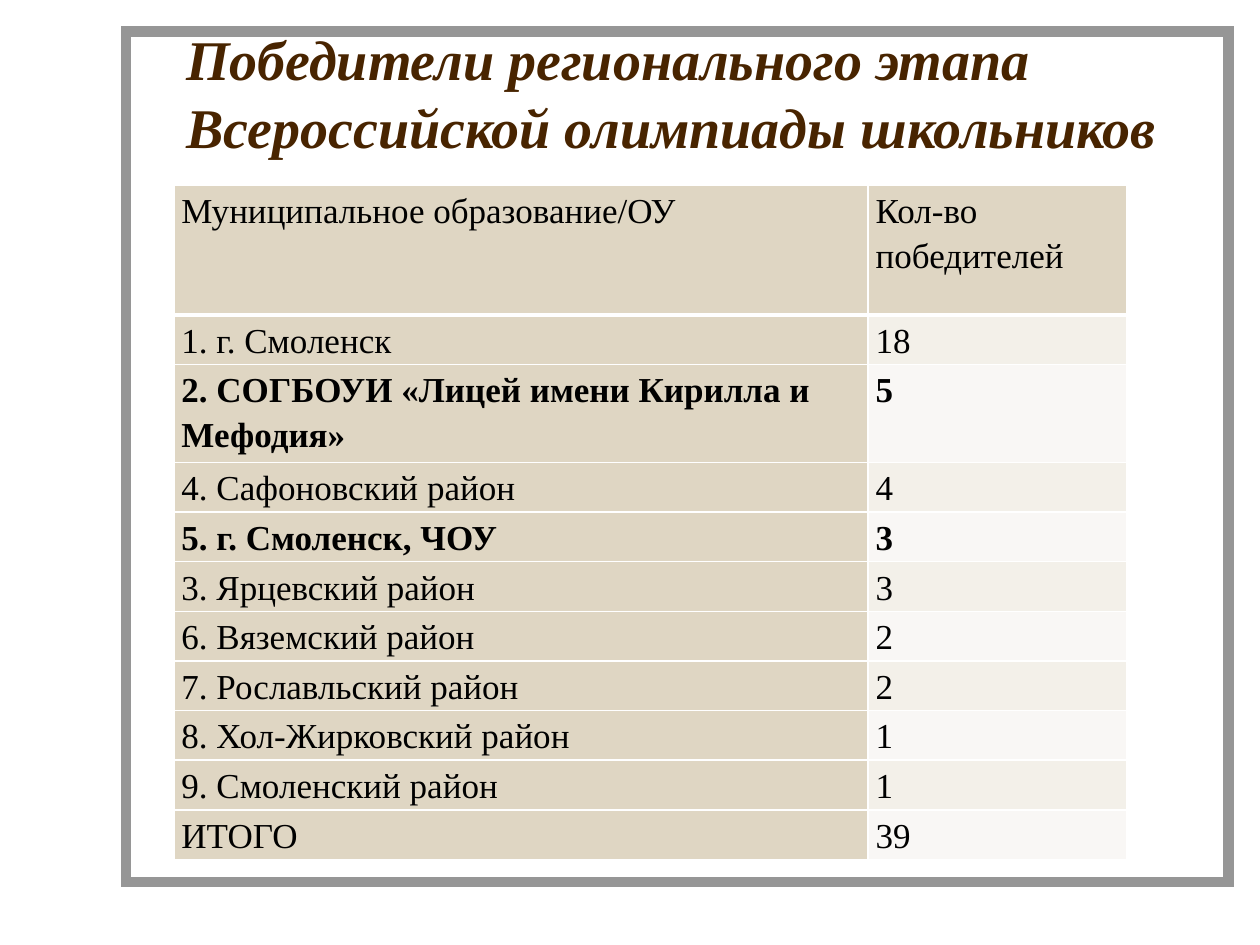
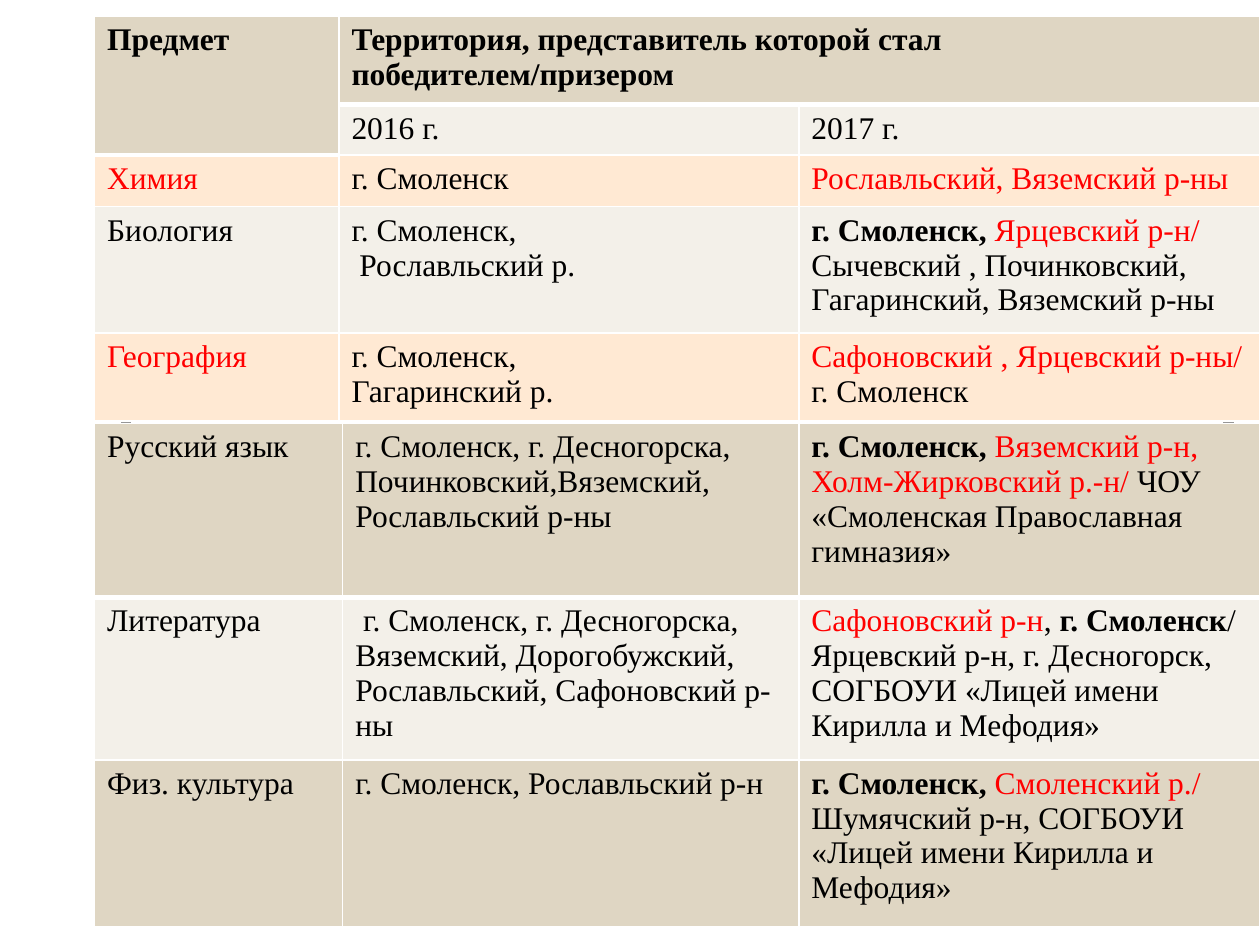
import dataclasses

import lxml.etree
import pptx
import pptx.dml.color
import pptx.enum.shapes
import pptx.enum.text
import pptx.oxml.ns
import pptx.util

Inches = pptx.util.Inches
Pt = pptx.util.Pt
qn = pptx.oxml.ns.qn


@dataclasses.dataclass(frozen=True)
class Theme:
    font: str = "Times New Roman"
    white: str = "FFFFFF"
    frame: str = "969696"
    title: str = "482400"
    text: str = "000000"
    red: str = "FF0000"
    tan: str = "DFD6C3"
    light: str = "F3F0E9"
    lighter: str = "F9F7F5"
    peach: str = "FFE9D3"
    title_size: int = 32
    winners_size: int = 20
    subjects_size: int = 18
    frame_width: float = 6
    thin: float = 1
    thick: float = 3


THEME = Theme()


@dataclasses.dataclass(frozen=True)
class Piece:
    """A stretch of text with its own colour and weight."""
    text: str
    color: str = THEME.text
    bold: bool = False


def red(text):
    return Piece(text, color=THEME.red)


def bold(text):
    return Piece(text, bold=True)


def rgb(color):
    return pptx.dml.color.RGBColor.from_string(color)


class Deck:
    def __init__(self, theme):
        self.theme = theme
        self.presentation = pptx.Presentation()
        self.presentation.slide_width = Inches(10)
        self.presentation.slide_height = Inches(7.5)
        self.slide = None

    def new_slide(self):
        """Start a blank slide with the shared grey frame."""
        self.slide = self.presentation.slides.add_slide(self.presentation.slide_layouts[6])
        frame = self.slide.shapes.add_shape(
            pptx.enum.shapes.MSO_SHAPE.RECTANGLE,
            Inches(1), Inches(0.25), Inches(8.75), Inches(6.75))
        frame.shadow.inherit = False
        frame.fill.solid()
        frame.fill.fore_color.rgb = rgb(self.theme.white)
        frame.line.color.rgb = rgb(self.theme.frame)
        frame.line.width = Pt(self.theme.frame_width)
        outline = frame._element.spPr.find(qn("a:ln"))
        lxml.etree.SubElement(outline, qn("a:miter"), lim="800000")

    def style(self, run, size, color, is_bold, is_italic=False):
        run.font.name = self.theme.font
        run.font.size = Pt(size)
        run.font.color.rgb = rgb(color)
        run.font.bold = is_bold
        run.font.italic = is_italic

    def title(self, text):
        heading = self.slide.shapes.add_textbox(
            Inches(1.38), Inches(0.44), Inches(8.74), Inches(0.58))
        frame = heading.text_frame
        frame.word_wrap = True
        frame.vertical_anchor = pptx.enum.text.MSO_ANCHOR.MIDDLE
        frame.text = text
        self.style(frame.paragraphs[0].runs[0], self.theme.title_size,
                   self.theme.title, True, True)

    def fill_cell(self, cell, content, size, spacing):
        """Fill a cell: a string, a Piece, or a list of paragraphs (lists of Pieces)."""
        if isinstance(content, str):
            content = [[Piece(line)] for line in content.split("\n")]
        elif isinstance(content, Piece):
            content = [[content]]
        frame = cell.text_frame
        for index, pieces in enumerate(content):
            paragraph = frame.add_paragraph() if index else frame.paragraphs[0]
            paragraph.line_spacing = spacing
            for piece in pieces:
                run = paragraph.add_run()
                run.text = piece.text
                self.style(run, size, piece.color, piece.bold)

    def borders(self, cell, top, bottom):
        properties = cell._tc.get_or_add_tcPr()
        widths = {"L": self.theme.thin, "R": self.theme.thin, "T": top, "B": bottom}
        for side, width in widths.items():
            line = lxml.etree.SubElement(properties, qn("a:ln" + side), w=str(Pt(width)))
            fill = lxml.etree.SubElement(line, qn("a:solidFill"))
            lxml.etree.SubElement(fill, qn("a:srgbClr"), val=self.theme.white)

    def table(self, left, top, columns, heights, rows, fills, size,
              heavy=(), merges=(), margins=None, spacing=None):
        """Draw a table; heavy lists the cells with a thick lower edge."""
        grid = self.slide.shapes.add_table(
            len(rows), len(columns), Inches(left), Inches(top),
            Inches(sum(columns)), Inches(sum(heights))).table
        grid.first_row = grid.horz_banding = False
        for column, width in zip(grid.columns, columns):
            column.width = Inches(width)
        for row, height in zip(grid.rows, heights):
            row.height = Inches(height)

        def edge(r, c):
            return self.theme.thick if (r, c) in heavy else self.theme.thin

        for r, contents in enumerate(rows):
            for c, content in enumerate(contents):
                cell = grid.cell(r, c)
                self.borders(cell, edge(r - 1, c), edge(r, c))
                cell.fill.solid()
                cell.fill.fore_color.rgb = rgb(fills[r][c])
                if margins:
                    (cell.margin_left, cell.margin_top,
                     cell.margin_right, cell.margin_bottom) = map(Inches, margins)
                if content is not None:
                    self.fill_cell(cell, content, size, spacing)
        for first, last in merges:
            grid.cell(*first).merge(grid.cell(*last))


def winners_slide(deck):
    theme = deck.theme
    deck.new_slide()
    deck.title("Победители регионального этапа Всероссийской олимпиады школьников")
    winners = [
        ("Муниципальное образование/ОУ", "Кол-во победителей"),
        ("1. г. Смоленск", "18"),
        (bold("2. СОГБОУИ «Лицей имени Кирилла и Мефодия»"), bold("5")),
        ("4. Сафоновский район", "4"),
        (bold("5. г. Смоленск, ЧОУ"), bold("3")),
        ("3. Ярцевский район", "3"),
        ("6. Вяземский район", "2"),
        ("7. Рославльский район", "2"),
        ("8. Хол-Жирковский район", "1"),
        ("9. Смоленский район", "1"),
        ("ИТОГО", "39"),
    ]
    bands = (theme.lighter, theme.light)
    fills = [(theme.tan, bands[r % 2] if r else theme.tan) for r in range(len(winners))]
    deck.table(1.38, 1.47, (5.51, 2.05), [1.03, 0.35, 0.69] + [0.35] * 8,
               winners, fills, theme.winners_size, heavy={(0, 0), (0, 1)},
               margins=(0.06, 0.01, 0.06, 0), spacing=1.15)


def subjects_slide(deck):
    theme = deck.theme
    deck.new_slide()
    tan, light, peach = ([color] * 3 for color in (theme.tan, theme.light, theme.peach))
    left, size = 0.75, theme.subjects_size
    smolensk = bold("г. Смоленск, ")

    # Sciences, with the two-level header
    sciences = [
        (bold("Предмет"),
         bold("Территория, представитель которой стал победителем/призером"), None),
        (None, "2016 г.", "2017 г."),
        (red("Химия"), "г. Смоленск", red("Рославльский, Вяземский р-ны")),
        ("Биология", "г. Смоленск,\n Рославльский р.",
         [[smolensk, red("Ярцевский р-н/ "),
           Piece("Сычевский , Починковский, Гагаринский, Вяземский р-ны")]]),
        (red("География"), "г. Смоленск,\nГагаринский р.",
         [[red("Сафоновский , Ярцевский р-ны/ "), Piece("г. Смоленск")]]),
    ]
    deck.table(left, 0.13, (1.94, 3.65, 3.66), (0.64, 0.4, 0.41, 0.93, 0.65),
               sciences, (tan, light, peach, light, peach), size,
               heavy={(0, 0), (0, 1), (0, 2), (1, 0)},
               merges=[((0, 0), (1, 0)), ((0, 1), (0, 2))])

    # Languages and physical education share columns and a thick first edge
    languages = [
        ("Русский язык",
         "г. Смоленск, г. Десногорска, Починковский,Вяземский, Рославльский р-ны",
         [[smolensk, red("Вяземский р-н, Холм-Жирковский р.-н/ "),
           Piece("ЧОУ «Смоленская Православная гимназия»")]]),
        ("Литература",
         " г. Смоленск, г. Десногорска, Вяземский, Дорогобужский, "
         "Рославльский, Сафоновский р-ны",
         [[red("Сафоновский р-н"), Piece(", "), bold("г. Смоленск"), Piece("/")],
          [Piece("Ярцевский р-н, г. Десногорск, СОГБОУИ «Лицей имени Кирилла и Мефодия»")]]),
    ]
    sport = [
        ("Физ. культура", "г. Смоленск, Рославльский р-н",
         [[smolensk, red("Смоленский р./ "),
           Piece("Шумячский р-н, СОГБОУИ «Лицей имени Кирилла и Мефодия»")]]),
    ]
    for top, heights, rows in ((3.36, (1.38, 1.3), languages), (6.03, (1.34,), sport)):
        deck.table(left, top, (1.97, 3.62, 3.66), heights, rows, (tan, light), size,
                   heavy={(0, 0), (0, 1), (0, 2)})


def main():
    deck = Deck(THEME)
    winners_slide(deck)
    subjects_slide(deck)
    deck.presentation.save("out.pptx")


if __name__ == "__main__":
    main()
